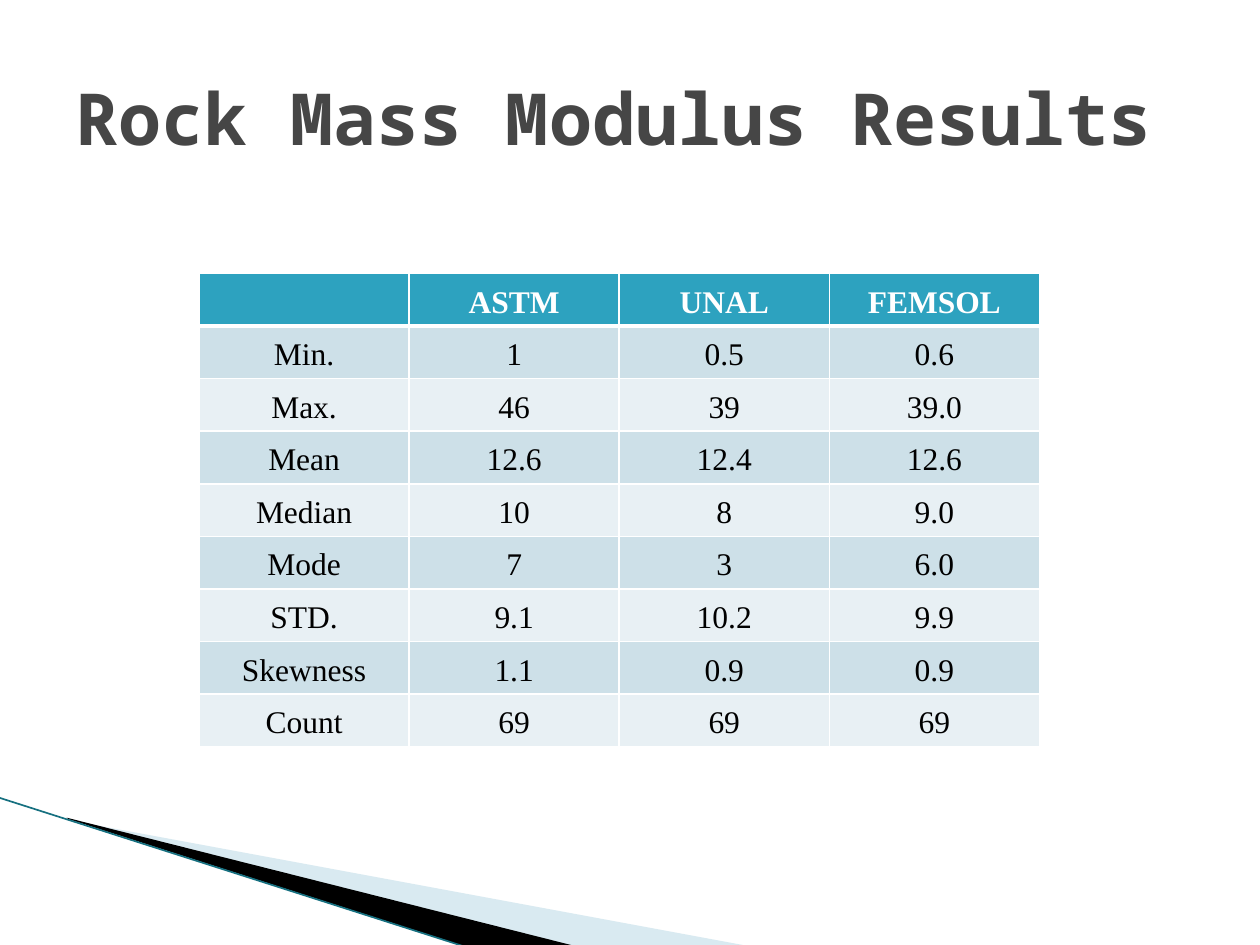
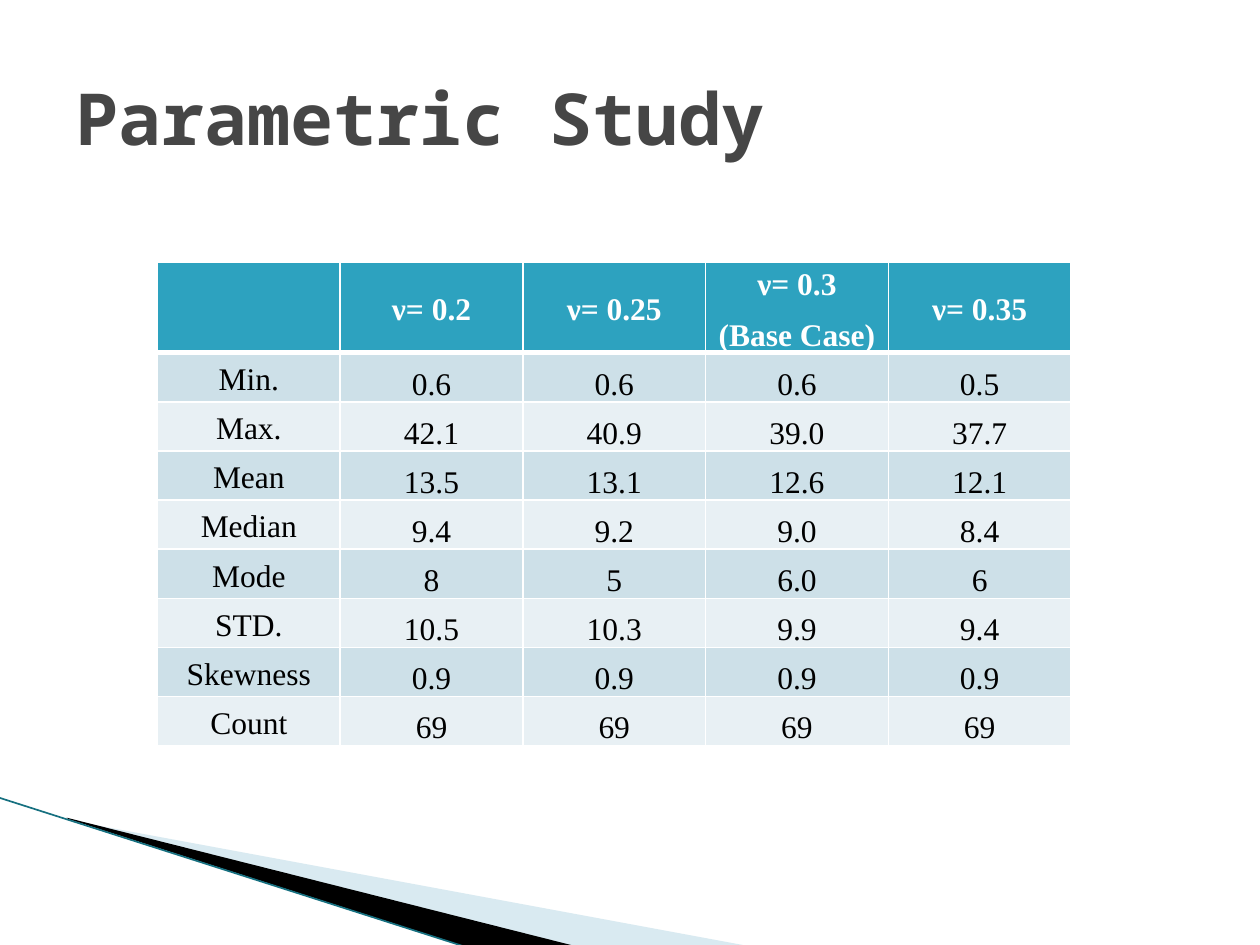
import dataclasses

import pptx
import pptx.dml.color
import pptx.enum.shapes
import pptx.enum.text
import pptx.oxml
import pptx.oxml.ns
import pptx.util

ALIGN = pptx.enum.text.PP_ALIGN
ANCHOR = pptx.enum.text.MSO_ANCHOR
COLS, ROWS = 40, 30
TITLE_ONLY = 5


@dataclasses.dataclass(frozen=True)
class Theme:
    white: str = "FFFFFF"
    black: str = "000000"
    title: str = "464646"
    head: str = "2DA2BF"
    bands: tuple = ("CDE0E8", "E8F0F4")
    wedge: str = "A0CBDC"
    edge: str = "167080"
    head_font: str = "Noto Sans Mono"
    body_font: str = "Times New Roman"
    head_size: int = 41
    body_size: int = 18


def rgb(code):
    return pptx.dml.color.RGBColor.from_string(code)


def node(tag, inner="", attrs=""):
    """Make a DrawingML element."""
    space = pptx.oxml.ns.nsdecls("a")
    return pptx.oxml.parse_xml(f"<a:{tag} {space} {attrs}>{inner}</a:{tag}>")


class Deck:
    """Holds the theme and the current slide; lengths are grid cells."""

    def __init__(self, theme):
        self.theme = theme
        self.prs = pptx.Presentation()
        self.prs.slide_width = pptx.util.Inches(10)
        self.prs.slide_height = pptx.util.Inches(7.5)
        self.slide = None

    def x(self, cols):
        return round(self.prs.slide_width * cols / COLS)

    def y(self, rows):
        return round(self.prs.slide_height * rows / ROWS)

    def page(self, title):
        """Start a slide with its corner wedges and title."""
        look = self.theme
        layout = self.prs.slide_layouts[TITLE_ONLY]
        self.slide = self.prs.slides.add_slide(layout)
        self.wedge([(2.2, 26.04), (23.8, 30.04), (18.24, 30.04), (2.2, 26)],
                   look.wedge, 40)
        self.wedge([(2.12, 25.96), (18.28, 30.04), (14.88, 30.08), (2.16, 26)],
                   look.black)
        self.line((-0.04, 25.32), (14.84, 30.08))
        self.title(title)

    def title(self, text):
        box = self.slide.shapes.title
        box.left, box.top = self.x(2), self.y(1.2)
        box.width, box.height = self.x(36), self.y(5)
        frame = box.text_frame
        frame.text = text
        frame.word_wrap = True
        frame.auto_size = pptx.enum.text.MSO_AUTO_SIZE.NONE
        frame.vertical_anchor = ANCHOR.MIDDLE
        look = self.theme
        for para in frame.paragraphs:
            para.alignment = ALIGN.LEFT
            self.style(para, look.head_font, look.head_size, look.title, True)

    def style(self, para, face, size, color, bold):
        for run in para.runs:
            font = run.font
            font.name, font.size = face, pptx.util.Pt(size)
            font.bold = bold
            font.color.rgb = rgb(color)

    def wedge(self, points, color, alpha=100):
        """Fill a closed outline; alpha is opacity in percent."""
        spots = [(self.x(col), self.y(row)) for col, row in points]
        pen = self.slide.shapes.build_freeform(*spots[0])
        pen.add_line_segments(spots[1:], close=True)
        shape = pen.convert_to_shape()
        shape.shadow.inherit = False
        shape.line.fill.background()
        shape.fill.solid()
        shape.fill.fore_color.rgb = rgb(color)
        if alpha < 100:
            tone = shape.element.spPr.find(".//" + pptx.oxml.ns.qn("a:srgbClr"))
            tone.append(node("alpha", attrs=f'val="{alpha * 1000}"'))

    def line(self, start, end):
        kind = pptx.enum.shapes.MSO_CONNECTOR.STRAIGHT
        link = self.slide.shapes.add_connector(
            kind, self.x(start[0]), self.y(start[1]),
            self.x(end[0]), self.y(end[1]))
        link.line.color.rgb = rgb(self.theme.edge)
        link.line.width = pptx.util.Pt(0.95)
        link.element.spPr.append(node("effectLst"))

    def table(self, spot, size, heights, rows, anchor):
        """Heights are those of the head row and of each body row."""
        left, top = spot
        wide, high = size
        frame = self.slide.shapes.add_table(
            len(rows), len(rows[0]), self.x(left), self.y(top),
            self.x(wide), self.y(high))
        grid = frame.table
        for i, row in enumerate(rows):
            grid.rows[i].height = self.y(heights[min(i, 1)])
            for j, text in enumerate(row):
                place = anchor if i and j else ANCHOR.MIDDLE
                self.cell(grid.cell(i, j), text, i, place)
        frame.height = self.y(high)

    def cell(self, cell, text, row, anchor):
        look = self.theme
        head = row == 0
        self.border(cell, head)
        cell.fill.solid()
        cell.fill.fore_color.rgb = rgb(
            look.head if head else look.bands[(row - 1) % 2])
        cell.margin_left = cell.margin_right = pptx.util.Inches(0.07)
        cell.margin_top = cell.margin_bottom = 0
        cell.vertical_anchor = anchor
        cell.text_frame.text = text
        for para in cell.text_frame.paragraphs:
            para.alignment = ALIGN.CENTER
            para.line_spacing = 1.15
            para.space_after = pptx.util.Pt(6)
            self.style(para, look.body_font, look.body_size,
                       look.white if head else look.black, head)

    def border(self, cell, head):
        """Draw white edges, with a thick one under the head row."""
        widths = {"L": 1, "R": 1}
        widths.update({"T": 1, "B": 3} if head else {"B": 1})
        props = cell._tc.get_or_add_tcPr()
        fill = (f'<a:solidFill><a:srgbClr val="{self.theme.white}"/>'
                "</a:solidFill>")
        for side, width in widths.items():
            props.append(node(f"ln{side}", fill,
                              f'w="{pptx.util.Pt(width)}"'))


STATS = ("Min.", "Max.", "Mean", "Median", "Mode", "STD.", "Skewness", "Count")

MODULUS = {
    "ASTM": "1 46 12.6 10 7 9.1 1.1 69",
    "UNAL": "0.5 39 12.4 8 3 10.2 0.9 69",
    "FEMSOL": "0.6 39.0 12.6 9.0 6.0 9.9 0.9 69",
}

POISSON = {
    "ν= 0.2": "0.6 42.1 13.5 9.4 8 10.5 0.9 69",
    "ν= 0.25": "0.6 40.9 13.1 9.2 5 10.3 0.9 69",
    "ν= 0.3\n(Base Case)": "0.6 39.0 12.6 9.0 6.0 9.9 0.9 69",
    "ν= 0.35": "0.5 37.7 12.1 8.4 6 9.4 0.9 69",
}


def tabulate(data):
    """Turn named columns into table rows led by the statistics."""
    body = zip(STATS, *(values.split() for values in data.values()))
    return [("", *data), *body]


def main():
    deck = Deck(Theme())
    deck.page("Rock Mass Modulus Results")
    deck.table((6.32, 8.68), (26.68, 15), (1.67, 1.67),
               tabulate(MODULUS), ANCHOR.MIDDLE)
    deck.page("Parametric Study")
    deck.table((5, 8.32), (29, 15.6), (2.16, 1.56),
               tabulate(POISSON), ANCHOR.BOTTOM)
    deck.prs.save("out.pptx")


if __name__ == "__main__":
    main()
